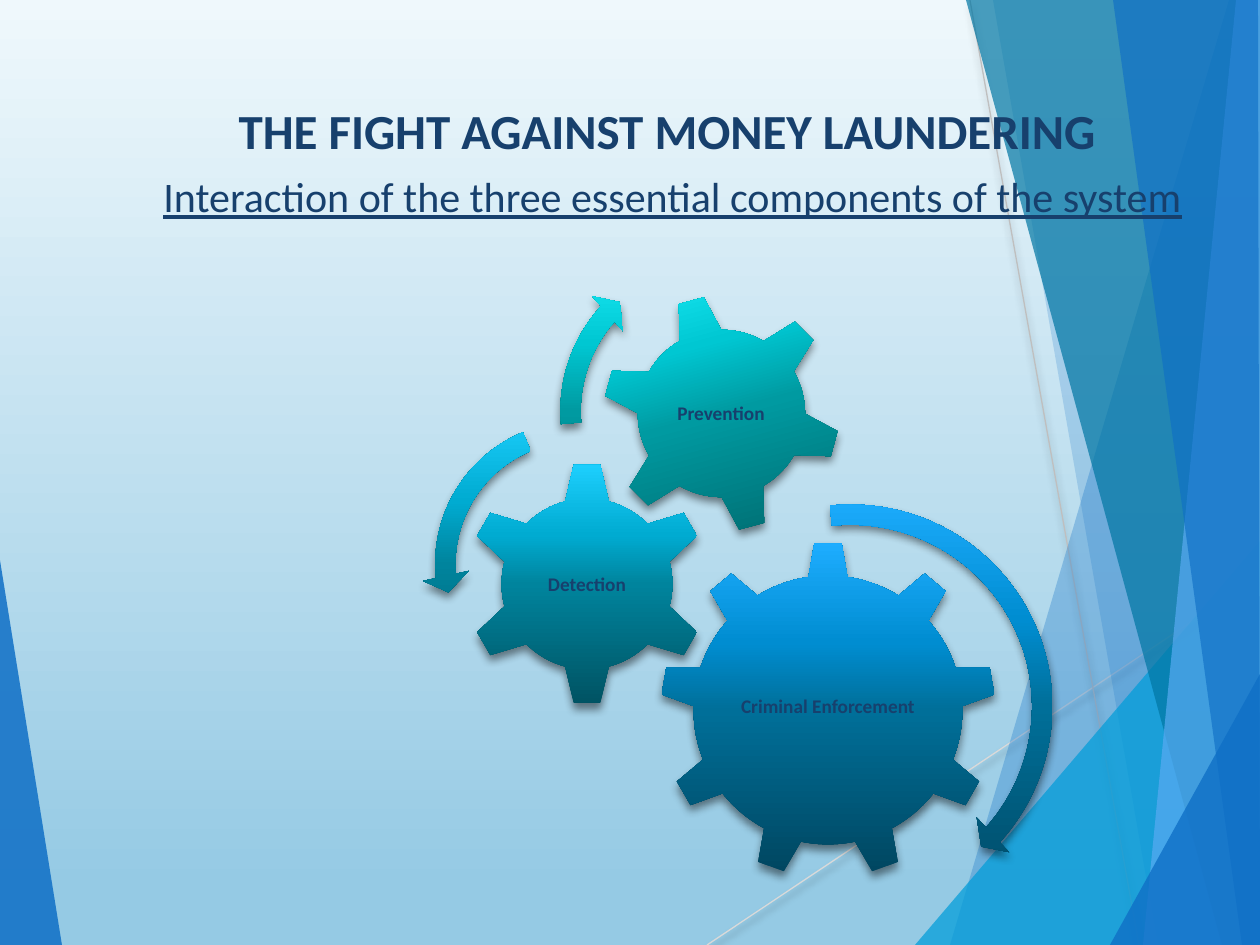
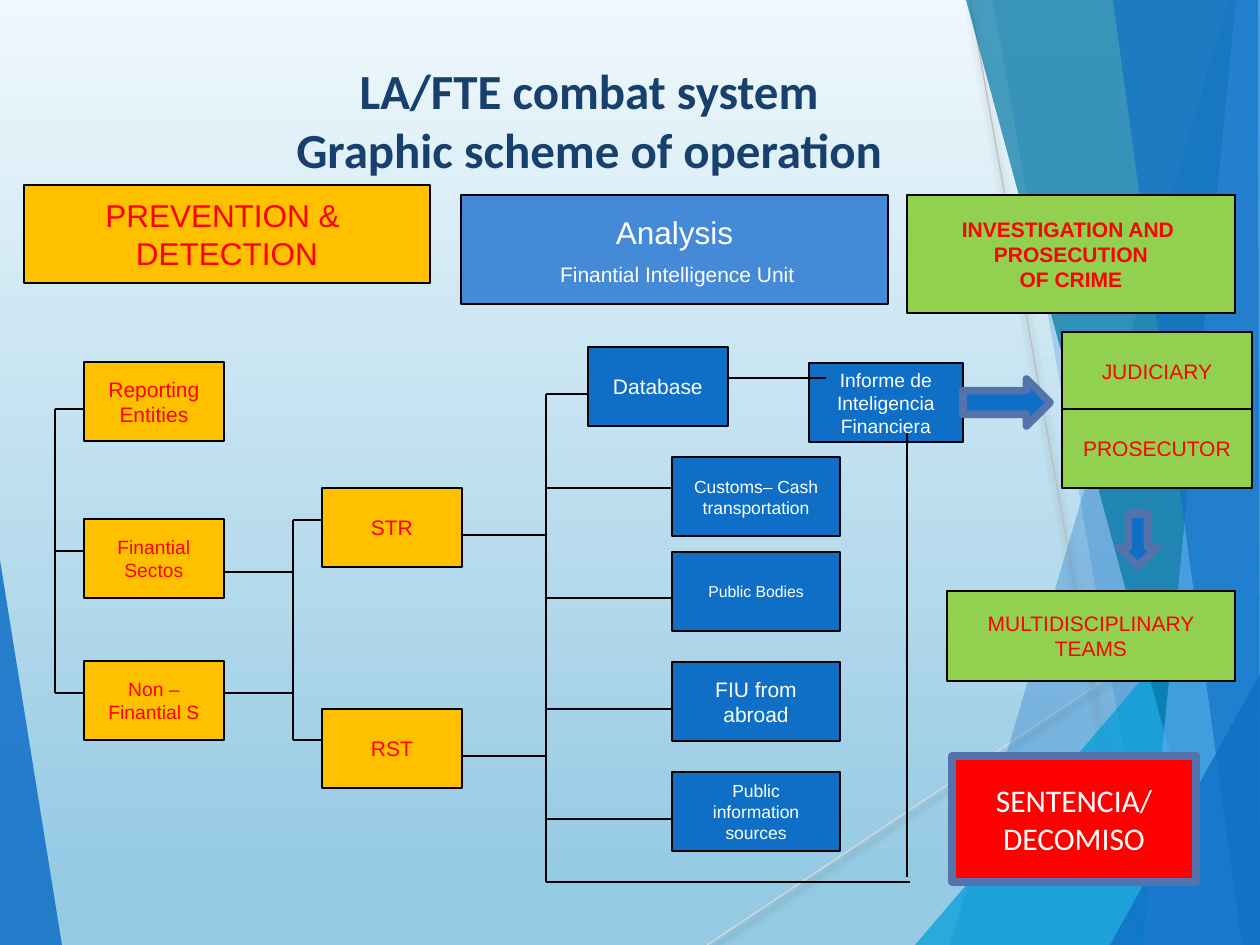
from lxml import etree
from pptx import Presentation
from pptx.dml.color import RGBColor
from pptx.enum.shapes import MSO_CONNECTOR, MSO_SHAPE
from pptx.enum.text import MSO_ANCHOR, MSO_AUTO_SIZE, PP_ALIGN
from pptx.oxml.ns import qn
from pptx.util import Emu, Pt

PX = 914400 / 126
WIDTH, HEIGHT = 1260, 945

CENTER = PP_ALIGN.CENTER
TOP, MIDDLE, BOTTOM = MSO_ANCHOR.TOP, MSO_ANCHOR.MIDDLE, MSO_ANCHOR.BOTTOM
NO_FIT = MSO_AUTO_SIZE.NONE
STRAIGHT = MSO_CONNECTOR.STRAIGHT
RECT = MSO_SHAPE.RECTANGLE
RIGHT_ARROW, DOWN_ARROW = MSO_SHAPE.RIGHT_ARROW, MSO_SHAPE.DOWN_ARROW
GEAR_6, GEAR_9 = MSO_SHAPE.GEAR_6, MSO_SHAPE.GEAR_9
CLOCKWISE, COUNTER = MSO_SHAPE.CIRCULAR_ARROW, MSO_SHAPE.LEFT_CIRCULAR_ARROW

NAVY = RGBColor(0x17, 0x40, 0x6D)
BLUE = RGBColor(0x0F, 0x6F, 0xC6)
MID_BLUE = RGBColor(0x44, 0x8A, 0xD7)
SKY = RGBColor(0x59, 0xAA, 0xF2)
CYAN = RGBColor(0x00, 0x9D, 0xD9)
TEAL = RGBColor(0x00, 0x76, 0xA3)
SLATE = RGBColor(0x54, 0x72, 0xAC)
AMBER = RGBColor(0xFF, 0xC0, 0x00)
GREEN = RGBColor(0x92, 0xD0, 0x50)
RED = RGBColor(0xFF, 0x00, 0x00)
WHITE = RGBColor(0xFF, 0xFF, 0xFF)
BLACK = RGBColor(0x00, 0x00, 0x00)
LIGHT_GREY = RGBColor(0xD9, 0xD9, 0xD9)
GREY = RGBColor(0xBF, 0xBF, 0xBF)

BACKGROUND = [(0, "EFF8FC"), (94, "95CAE4")]
RAYS = [((707, 945, 1260, 576), LIGHT_GREY), ((970, 0, 1139, 945), GREY)]
FACETS = [
    ([(0, 560), (62, 945), (0, 945)], BLUE, 85),
    ([(1229, 0), (950, 945), (1260, 945), (1260, 0)], BLUE, 30),
    ([(993, 0), (1158, 945), (1260, 945), (1260, 0)], BLUE, 20),
    ([(915, 945), (1260, 541), (1260, 945)], CYAN, 72),
    ([(966, 0), (1222, 945), (1260, 945), (1260, 0)], TEAL, 70),
    ([(1236, 0), (1143, 945), (1260, 945), (1260, 0)], SKY, 70),
    ([(1113, 0), (1242, 945), (1260, 945), (1258, 0)], BLUE, 65),
    ([(1110, 945), (1260, 674), (1260, 945)], BLUE, 80),
]

FIGHT_TITLE = [("THE FIGHT AGAINST MONEY LAUNDERING ", 28),
               ("Interaction of the three essential components of the system", 24)]
ENFORCEMENT = [(0, "00455F"), (50, "006F99"), (70, "008DD1"), (100, "1EADFF")]
DETECTION = [(0, "005262"), (50, "00849D"), (70, "00ABD1"), (100, "1ED0FF")]
PREVENTION = [(0, "006064"), (50, "009AA1"), (70, "00C7D2"), (100, "1FF2FF")]
GEARS = [
    (GEAR_9, 660, 542, 336, 0, ENFORCEMENT),
    (GEAR_6, 465, 462, 244, 0, DETECTION),
    (GEAR_6, 602, 294, 239, -15, PREVENTION),
]
GEAR_LABELS = [
    ("Criminal Enforcement", 828, 707, 220),
    ("Detection", 587, 585, 121),
    ("Prevention", 721, 414, 135),
]
TURNS = [
    (CLOCKWISE, 635, 491, 431, (4.7, 4.98, 42.03, 264.16, 5.5), ENFORCEMENT),
    (COUNTER, 422, 408, 312, (6.5, 7.17, 174.82, 247.3, 7.5), DETECTION),
    (CLOCKWISE, 547, 242, 338, (6, 6.57, 221.9, 175.14, 7), PREVENTION),
]

SYSTEM_TITLE = [("LA/FTE combat system", 28), ("Graphic scheme of operation", 28)]
STAGES = [
    ((24, 185, 406, 98), AMBER, RED, [("PREVENTION & ", 18), ("DETECTION", 18)], False),
    ((461, 195, 427, 109), MID_BLUE, WHITE,
     [("Analysis", 18), (" Finantial Intelligence Unit", 12)], False),
    ((907, 195, 328, 118), GREEN, RED,
     [("INVESTIGATION AND ", 12), ("PROSECUTION", 12), ("OF CRIME", 12)], True),
]
BOX_H = 79
COLUMNS = [
    (84, 140, AMBER, RED, [(362, "Reporting Entities", 12), (519, "Finantial Sectos", 11),
                           (661, "Non – Finantial S", 11)]),
    (322, 140, AMBER, RED, [(488, "STR", 12), (709, "RST", 12)]),
    (588, 140, BLUE, WHITE, [(347, "Database", 12)]),
    (672, 168, BLUE, WHITE, [(457, "Customs– Cash transportation", 10),
                             (552, "Public Bodies", 9), (662, "FIU from abroad", 12),
                             (772, "Public information sources", 10)]),
    (809, 154, BLUE, WHITE, [(363, "Informe de Inteligencia Financiera", 11)]),
    (1062, 190, GREEN, RED, [(332, "JUDICIARY", 12), (409, "PROSECUTOR", 12)]),
]
TEAMS = ((947, 591, 288, 90), GREEN, RED, [("MULTIDISCIPLINARY TEAMS", 12)])
RULING = ((952, 756, 244, 126), RED, WHITE, [("SENTENCIA/", 18), ("DECOMISO", 18)])
TRUNKS = [
    (55, 409, 693, [(84, 409), (84, 551), (84, 693)]),
    (293, 520, 740, [(322, 520), (322, 740), (224, 572), (224, 693)]),
    (546, 394, 882, [(588, 394), (462, 535), (462, 756), (672, 488), (672, 598),
                     (672, 709), (672, 819), (910, 882)]),
    (907, 433, 877, []),
]
REPORT_LINK = (729, 378, 826, 378)
BLOCK_ARROWS = [(RIGHT_ARROW, (963, 379, 87, 47)), (DOWN_ARROW, (1119, 514, 38, 52))]


def px(*values):
    return [Emu(round(v * PX)) for v in values]


def add_xml(parent, tag, **attrs):
    return etree.SubElement(parent, qn(tag), {k: str(v) for k, v in attrs.items()})


def paint_gradient(fill, element, stops, angle):
    fill.gradient()
    fill.gradient_angle = angle
    gs_lst = next(element.iter(qn("a:gsLst")))
    for gs in list(gs_lst):
        gs_lst.remove(gs)
    for pos, color in stops:
        add_xml(add_xml(gs_lst, "a:gs", pos=pos * 1000), "a:srgbClr", val=color)


def add_shadow(effects, alpha, blur, dist):
    shadow = add_xml(effects, "a:outerShdw", blurRad=Pt(blur), dist=Pt(dist),
                     dir=5400000, algn="ctr", rotWithShape=0)
    color = add_xml(shadow, "a:srgbClr", val="000000")
    add_xml(color, "a:alpha", val=alpha * 1000)


def add_line(s, ends, color=BLACK):
    line = s.shapes.add_connector(STRAIGHT, *px(*ends))
    line.line.color.rgb = color
    line.line.width = Pt(0.75)
    return add_xml(line.element.spPr, "a:effectLst")


def write(tf, lines, font, color, bold=False, anchor=MIDDLE):
    tf.text = "\n".join(text for text, size in lines)
    tf.vertical_anchor = anchor
    for p, (text, size) in zip(tf.paragraphs, lines):
        p.alignment = CENTER
        for r in p.runs:
            r.font.name, r.font.size, r.font.bold = font, Pt(size), bold
            r.font.color.rgb = color


def set_insets(tf, x, y):
    tf.margin_left = tf.margin_right = px(x)[0]
    tf.margin_top = tf.margin_bottom = px(y)[0]


def add_shape(s, kind, at, fill, line=BLACK, width=0.75):
    sp = s.shapes.add_shape(kind, *px(*at))
    sp.shadow.inherit = False
    sp.fill.solid()
    sp.fill.fore_color.rgb = fill
    sp.line.color.rgb = line
    sp.line.width = Pt(width)
    return sp


def add_box(s, at, fill, ink, lines, bold=False, wrap=True):
    sp = add_shape(s, RECT, at, fill)
    tf = sp.text_frame
    set_insets(tf, 19, 9)
    tf.word_wrap = wrap
    write(tf, lines, "Arial", ink, bold)
    return tf


def add_gradient_shape(s, kind, x, y, size, stops):
    sp = s.shapes.add_shape(kind, *px(x, y, size, size))
    sp.shadow.inherit = False
    paint_gradient(sp.fill, sp.element, stops, 90)
    sp.line.fill.background()
    add_shadow(next(sp.element.iter(qn("a:effectLst"))), 45, 5, 3)
    return sp


def add_slide(prs, title_at, title, anchor):
    s = prs.slides.add_slide(prs.slide_layouts[5])
    for ends, color in RAYS:
        add_shadow(add_line(s, ends, color), 35, 4, 3)
    for points, color, alpha in FACETS:
        builder = s.shapes.build_freeform(*points[0], scale=PX)
        builder.add_line_segments(points[1:], close=True)
        sp = builder.convert_to_shape()
        sp.shadow.inherit = False
        sp.fill.solid()
        sp.fill.fore_color.rgb = color
        add_xml(next(sp.element.iter(qn("a:srgbClr"))), "a:alpha", val=alpha * 1000)
        sp.line.fill.background()
    head = s.shapes.title
    head.left, head.top, head.width, head.height = px(*title_at)
    s.shapes._spTree.append(head.element)
    tf = head.text_frame
    tf.auto_size = NO_FIT
    write(tf, title, "Calibri", NAVY, True, anchor)
    return s, tf


def build_fight(prs):
    s, tf = add_slide(prs, (110, 94, 1125, 140), FIGHT_TITLE, TOP)
    subtitle = tf.paragraphs[1]
    subtitle.space_before = Pt(6.4)
    font = subtitle.runs[0].font
    font.bold, font.underline = False, True
    for kind, x, y, size, rotation, stops in GEARS:
        add_gradient_shape(s, kind, x, y, size, stops).rotation = rotation
    for text, cx, cy, w in GEAR_LABELS:
        tf = s.shapes.add_textbox(*px(cx - w / 2, cy - 30, w, 60)).text_frame
        tf.word_wrap = True
        set_insets(tf, 2, 2)
        write(tf, [(text, 11)], "Calibri", NAVY, True)
        tf.paragraphs[0].line_spacing = 0.9
    for kind, x, y, size, (band, tip, end, start, head), stops in TURNS:
        sp = add_gradient_shape(s, kind, x, y, size, stops)
        values = [band / 100, tip * 0.6, end * 0.6, start * 0.6, head / 100]
        for i, value in enumerate(values):
            sp.adjustments[i] = value


def build_system(prs):
    s, tf = add_slide(prs, (0, 21, 1134, 164), SYSTEM_TITLE, BOTTOM)
    pPr = tf.paragraphs[0]._p.get_or_add_pPr()
    pPr.set("marL", str(px(44)[0]))
    pPr.set("indent", "0")
    stages = [add_box(s, *stage, wrap=False) for stage in STAGES]
    stages[1].paragraphs[1].space_before = Pt(6)
    for x, w, fill, ink, boxes in COLUMNS:
        for y, text, size in boxes:
            add_box(s, (x, y, w, BOX_H), fill, ink, [(text, size)])
    add_box(s, *TEAMS)
    for x, top, bottom, branches in TRUNKS:
        add_line(s, (x, top, x, bottom))
        for end, y in branches:
            add_line(s, (x, y, end, y))
    add_line(s, REPORT_LINK)
    for kind, at in BLOCK_ARROWS:
        add_shape(s, kind, at, BLUE, SLATE, 4.33)
    at, fill, ink, lines = RULING
    write(add_shape(s, RECT, at, fill, SLATE, 4.33).text_frame, lines, "Calibri", ink)


def main():
    prs = Presentation()
    prs.slide_width, prs.slide_height = px(WIDTH, HEIGHT)
    master = prs.slide_master
    paint_gradient(master.background.fill, master.element, BACKGROUND, 270)
    build_fight(prs)
    build_system(prs)
    prs.save("out.pptx")


if __name__ == "__main__":
    main()
